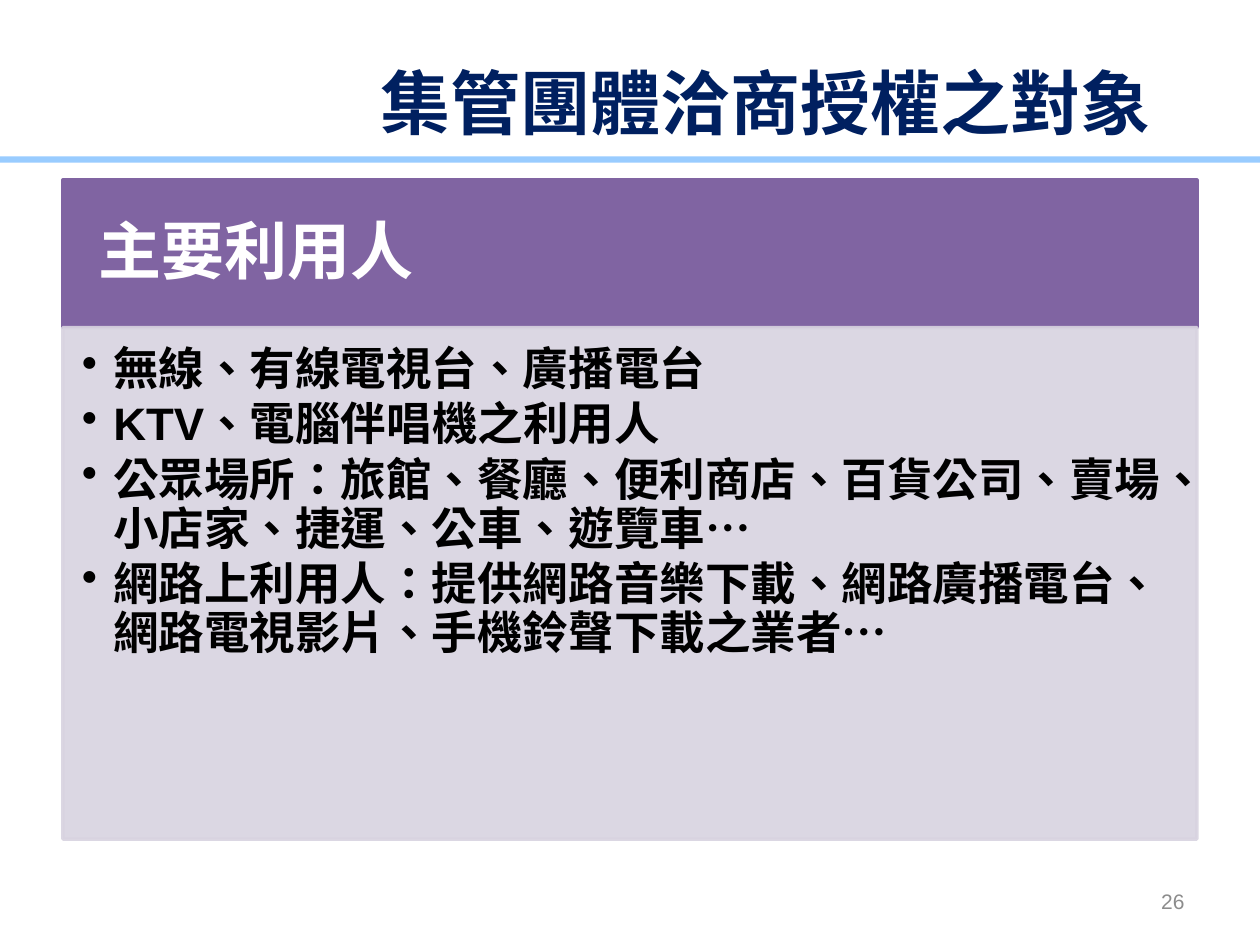
"""Build the slide on the users that collecting societies license."""
from dataclasses import dataclass

from lxml import etree
from pptx import Presentation
from pptx.dml.color import RGBColor
from pptx.enum.lang import MSO_LANGUAGE_ID
from pptx.enum.shapes import MSO_SHAPE
from pptx.enum.text import MSO_ANCHOR, PP_ALIGN
from pptx.oxml.ns import qn
from pptx.util import Inches, Pt

RECT = MSO_SHAPE.RECTANGLE
MIDDLE, TOP = MSO_ANCHOR.MIDDLE, MSO_ANCHOR.TOP
LEFT, CENTER, RIGHT = PP_ALIGN.LEFT, PP_ALIGN.CENTER, PP_ALIGN.RIGHT
CHINESE = MSO_LANGUAGE_ID.TRADITIONAL_CHINESE

COLORS = {
    "rule": "99CCFF",
    "title": "002060",
    "head": "8064A2",
    "body": "D8D3E0",
    "white": "FFFFFF",
    "black": "000000",
    "gray": "8C8C8C",
}
USERS = (
    "無線、有線電視台、廣播電台",
    "KTV、電腦伴唱機之利用人",
    "公眾場所：旅館、餐廳、便利商店、百貨公司、賣場、小店家、捷運、公車、遊覽車…",
    "網路上利用人：提供網路音樂下載、網路廣播電台、網路電視影片、手機鈴聲下載之業者…",
)


@dataclass(frozen=True)
class Style:
    """Look of a block of text."""
    size: int
    color: str
    bold: bool = True
    font: str = "Arial"
    align: PP_ALIGN = LEFT
    anchor: MSO_ANCHOR = MIDDLE
    spacing: float = 1.0
    after: float = 0
    bullet: bool = False


@dataclass(frozen=True)
class Panel:
    """A filled box with its text."""
    top: float
    height: float
    color: str
    alpha: int
    insets: tuple[float, ...]
    lines: tuple[str, ...]
    style: Style


PANELS = (
    Panel(1.43, 1.17, "head", 100, (0.28, 0.16, 0.28, 0.16), ("主要利用人",),
          Style(36, "white", spacing=0.9)),
    Panel(2.6, 4.06, "body", 90, (0.15, 0.15, 0.2, 0.23), USERS,
          Style(26, "black", anchor=TOP, spacing=0.9, after=3.5, bullet=True)),
)


def rgb(name: str) -> RGBColor:
    """Look up a colour by name."""
    return RGBColor.from_string(COLORS[name])


def place(shape, left: float, top: float, width: float, height: float) -> None:
    """Set position and size in inches."""
    shape.left, shape.top = Inches(left), Inches(top)
    shape.width, shape.height = Inches(width), Inches(height)


def write(frame, lines: tuple[str, ...], style: Style) -> None:
    """Fill a text frame, one paragraph a line."""
    frame.word_wrap = True
    frame.vertical_anchor = style.anchor
    for i, line in enumerate(lines):
        para = frame.paragraphs[0] if i == 0 else frame.add_paragraph()
        run = para.add_run()
        run.text = line
        run.font.language_id = CHINESE
        para.alignment = style.align
        para.line_spacing = style.spacing
        para.space_after = Pt(style.after)
        if style.bullet:
            props = para._p.get_or_add_pPr()
            props.set("marL", str(Inches(0.25)))
            props.set("indent", str(-Inches(0.25)))
            etree.SubElement(props, qn("a:buChar"), char="•")
        font = para.font
        font.name, font.size, font.bold = style.font, Pt(style.size), style.bold
        font.color.rgb = rgb(style.color)


def add_box(slide, box: tuple[float, ...], color: str):
    """Add a plain filled rectangle."""
    shape = slide.shapes.add_shape(RECT, *map(Inches, box))
    shape.shadow.inherit = False
    shape.fill.solid()
    shape.fill.fore_color.rgb = rgb(color)
    shape.line.fill.background()
    return shape


def add_panel(slide, panel: Panel) -> None:
    """Add an outlined panel with text."""
    shape = add_box(slide, (0.5, panel.top, 9, panel.height), panel.color)
    shape.line.color.rgb = rgb(panel.color)
    shape.line.width = Pt(2)
    if panel.alpha < 100:
        for tint in shape._element.spPr.iter(qn("a:srgbClr")):
            etree.SubElement(tint, qn("a:alpha"), val=str(panel.alpha * 1000))
    frame = shape.text_frame
    (frame.margin_left, frame.margin_top,
     frame.margin_right, frame.margin_bottom) = map(Inches, panel.insets)
    write(frame, panel.lines, panel.style)


def main() -> None:
    """Build and save the slide."""
    deck = Presentation()
    deck.slide_width, deck.slide_height = Inches(10), Inches(7.5)
    slide = deck.slides.add_slide(deck.slide_layouts[5])
    add_box(slide, (-0.04, 1.24, 10.06, 0.05), "rule")
    title = slide.shapes.title
    place(title, 2.48, 0.36, 7.19, 0.89)
    write(title.text_frame, ("集管團體洽商授權之對象",),
          Style(40, "title", font="Noto Sans CJK SC", align=CENTER))
    for panel in PANELS:
        add_panel(slide, panel)
    number = slide.shapes.add_textbox(*map(Inches, (7.17, 6.95, 2.33, 0.4)))
    write(number.text_frame, ("26",), Style(12, "gray", bold=False, align=RIGHT))
    deck.save("out.pptx")


if __name__ == "__main__":
    main()
